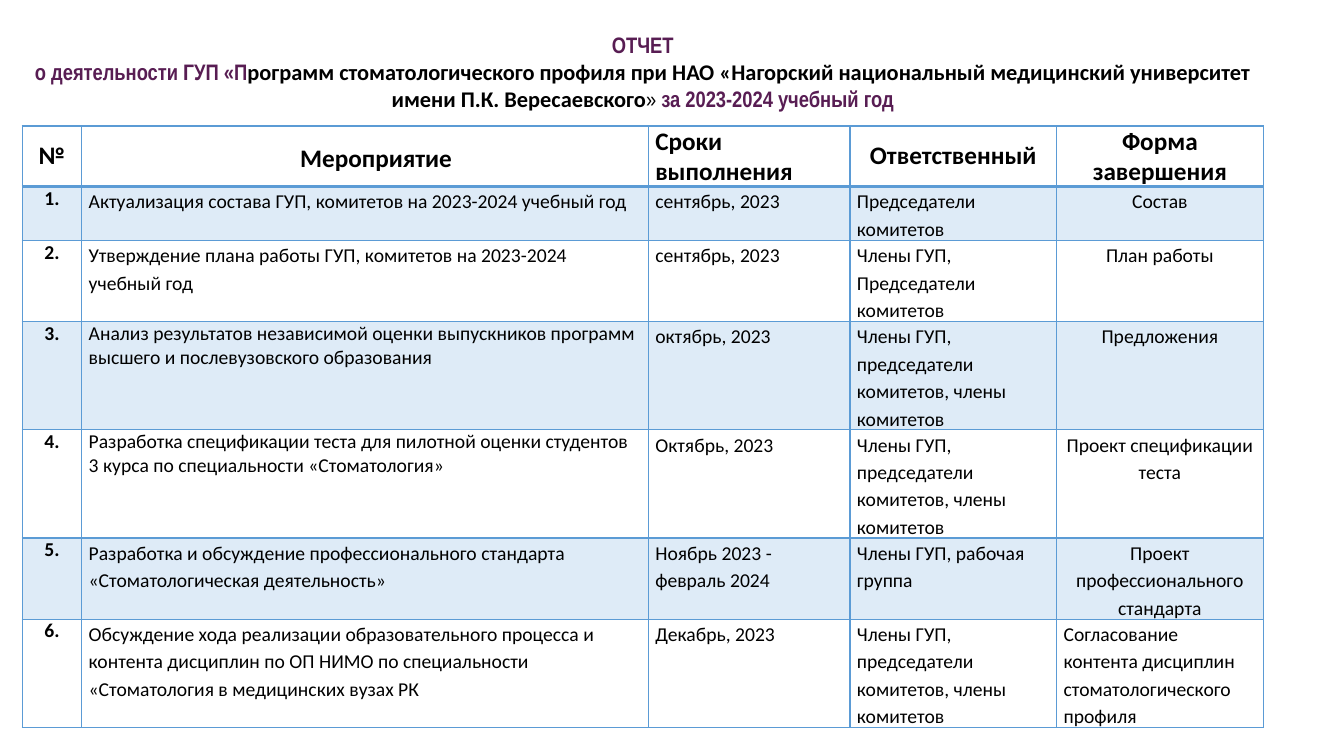
from dataclasses import dataclass

from lxml.etree import SubElement
from pptx import Presentation
from pptx.dml.color import RGBColor
from pptx.enum.text import MSO_ANCHOR, MSO_AUTO_SIZE, PP_ALIGN
from pptx.oxml.ns import qn
from pptx.util import Inches, Pt


@dataclass(frozen=True)
class Theme:
    ink: RGBColor = RGBColor(0, 0, 0)
    plum: RGBColor = RGBColor(0x58, 0x1D, 0x53)
    band: RGBColor = RGBColor(0xDE, 0xEB, 0xF7)
    rule: str = "5B9BD5"
    body_font: str = "Calibri"
    title_font: str = "Arial Narrow"
    title_size: Pt = Pt(16)
    head_size: Pt = Pt(18)
    body_size: Pt = Pt(14)


def apply(obj, fmt):
    for name, value in fmt.items():
        setattr(obj, name, value)


class ReportSlide:
    def __init__(self, prs, theme):
        self.theme = theme
        self.s = prs.slides.add_slide(prs.slide_layouts[6])

    def run(self, p, text, color=None, **fmt):
        r = p.add_run()
        r.text = text
        apply(r.font, {"name": self.theme.body_font, "bold": False, **fmt})
        r.font.color.rgb = color or self.theme.ink
        return r

    def title(self, box, paragraphs):
        tf = self.s.shapes.add_textbox(*map(Inches, box)).text_frame
        apply(tf, {"word_wrap": True, "auto_size": MSO_AUTO_SIZE.SHAPE_TO_FIT_TEXT})
        for i, runs in enumerate(paragraphs):
            p = tf.add_paragraph() if i else tf.paragraphs[0]
            p.alignment = PP_ALIGN.CENTER
            for text, fmt in runs:
                self.run(p, text, size=self.theme.title_size, **fmt)

    def borders(self, cell, widths):
        tcPr = cell._tc.get_or_add_tcPr()
        for i, (side, width) in enumerate(widths.items()):
            ln = SubElement(tcPr, qn(f"a:ln{side}"), w=str(Pt(width)))
            tcPr.remove(ln)
            tcPr.insert(i, ln)
            fill = SubElement(ln, qn("a:solidFill"))
            SubElement(fill, qn("a:srgbClr"), val=self.theme.rule)

    def cell(self, cell, text, banded, widths, fmt, para, anchor):
        apply(cell, {"margin_left": Inches(0.07), "margin_right": Inches(0.07),
                     "margin_top": 0, "margin_bottom": 0, "vertical_anchor": anchor})
        if banded:
            cell.fill.solid()
            cell.fill.fore_color.rgb = self.theme.band
        else:
            cell.fill.background()
        self.borders(cell, widths)
        p = cell.text_frame.paragraphs[0]
        apply(p, para)
        self.run(p, text, **fmt)
        return p

    def table(self, box, cols, heights, header, rows):
        t = self.theme
        tbl = self.s.shapes.add_table(len(rows) + 1, len(cols), *map(Inches, box)).table
        apply(tbl, {"first_row": False, "horz_banding": False})
        for col, width in zip(tbl.columns, cols):
            col.width = Inches(width)
        for row, height in zip(tbl.rows, heights):
            row.height = Inches(height)

        # Header row
        for j, text in enumerate(header):
            para = {"alignment": PP_ALIGN.LEFT if j == 2 else PP_ALIGN.CENTER,
                    "line_spacing": 1.15 if j == 1 else 1.0}
            anchor = MSO_ANCHOR.TOP if j == 4 else MSO_ANCHOR.MIDDLE
            p = self.cell(tbl.cell(0, j), text, False, {"L": 1, "R": 1, "T": 1, "B": 2},
                          {"size": t.head_size, "bold": True}, para, anchor)
            if j == 1:
                p._p.get_or_add_pPr().set("indent", str(Inches(0.22)))

        # Numbered activity rows, every odd one tinted
        for i, row in enumerate(rows, 1):
            widths = {"L": 1, "R": 1, "T": 2 if i == 1 else 1, "B": 1}
            for j, text in enumerate((f"{i}.", *row)):
                centred = j == 0 or (j == 4 and i < len(rows))
                single = j == 0 or (j == 1 and i in (3, 4))
                para = {"alignment": PP_ALIGN.CENTER if centred else PP_ALIGN.LEFT,
                        "line_spacing": 1.0 if single else 1.15}
                self.cell(tbl.cell(i, j), text, i % 2 == 1, widths,
                          {"size": t.body_size, "bold": j == 0}, para, MSO_ANCHOR.TOP)


HEADER = ["№", "Мероприятие", "Сроки выполнения", "Ответственный", "Форма завершения"]
ALL_MEMBERS = "Члены ГУП, председатели комитетов, члены комитетов"
ROWS = [
    ("Актуализация состава ГУП, комитетов на 2023-2024 учебный год",
     "сентябрь, 2023", "Председатели комитетов", "Состав"),
    ("Утверждение плана работы ГУП, комитетов на 2023-2024 учебный год",
     "сентябрь, 2023", "Члены ГУП, Председатели комитетов", "План работы"),
    ("Анализ результатов независимой оценки выпускников программ высшего и "
     "послевузовского образования",
     "октябрь, 2023", ALL_MEMBERS, "Предложения"),
    ("Разработка спецификации теста для пилотной оценки студентов 3 курса по "
     "специальности «Стоматология»",
     "Октябрь, 2023", ALL_MEMBERS, "Проект спецификации теста"),
    ("Разработка и обсуждение профессионального стандарта «Стоматологическая деятельность»",
     "Ноябрь 2023 - февраль 2024", "Члены ГУП, рабочая группа",
     "Проект профессионального стандарта"),
    ("Обсуждение хода реализации образовательного процесса и контента дисциплин "
     "по ОП НИМО по специальности «Стоматология в медицинских вузах РК",
     "Декабрь, 2023", ALL_MEMBERS, "Согласование контента дисциплин стоматологического профиля"),
]


def main():
    prs = Presentation()
    apply(prs, {"slide_width": Inches(13.33), "slide_height": Inches(7.5)})
    theme = Theme()
    slide = ReportSlide(prs, theme)

    # Report title
    accent = {"name": theme.title_font, "color": theme.plum, "bold": True}
    slide.title((0.22, 0.26, 12.31, 0.91), [
        [("ОТЧЕТ", accent)],
        [("о деятельности ГУП «П", accent),
         ("рограмм стоматологического профиля при НАО «Нагорский национальный "
          "медицинский университет имени П.К. Вересаевского", {"bold": True}),
         ("»", {"name": theme.title_font}),
         (" за 2023-2024 учебный год", accent)],
    ])

    # Activity table
    slide.table((0.22, 1.25, 12.31, 5.96), [0.59, 5.62, 2, 2.05, 2.05],
                [0.6, 0.53, 0.8, 1.07, 1.07, 0.8, 1.07], HEADER, ROWS)
    prs.save("out.pptx")


if __name__ == "__main__":
    main()
